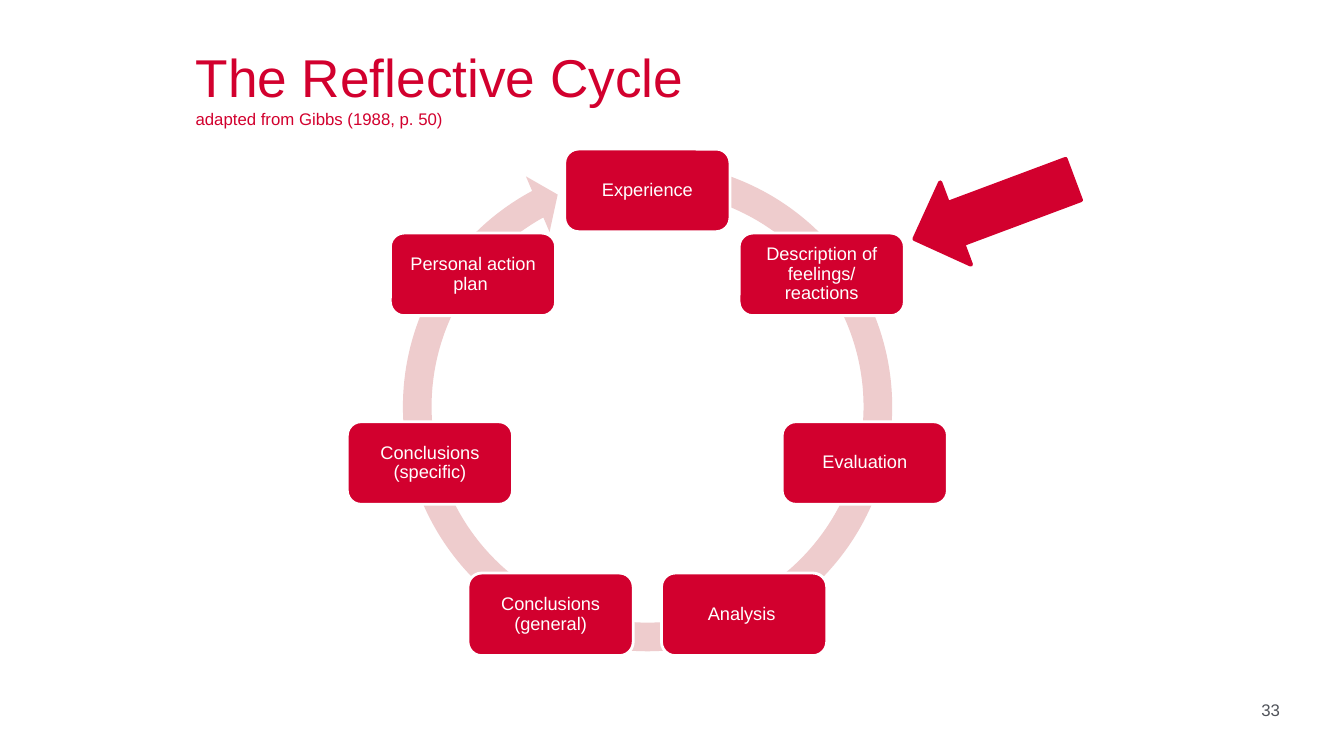
import math
from dataclasses import dataclass

import pptx
import pptx.util
from pptx.dml.color import RGBColor
from pptx.enum.shapes import MSO_SHAPE
from pptx.enum.text import MSO_ANCHOR, PP_ALIGN

Pt = pptx.util.Pt


@dataclass(frozen=True)
class Theme:
    font: str = "Arial"
    red: str = "D2002E"
    pale_red: str = "EECCCD"
    white: str = "FFFFFF"
    grey: str = "50535A"
    title_size: float = 38
    small_size: float = 12
    node_size: float = 13


def write(para, text, font, size, color, align=PP_ALIGN.LEFT, spacing=1.0):
    para.alignment = align
    para.line_spacing = spacing
    span = para.add_run()
    span.text = text
    span.font.name = font
    span.font.size = Pt(size)
    span.font.color.rgb = RGBColor.from_string(color)


class SlideBuilder:
    def __init__(self, page, theme):
        self.page = page
        self.theme = theme

    def prepare_frame(self, box, anchor, inset=0):
        frame = box.text_frame
        frame.word_wrap = True
        frame.vertical_anchor = anchor
        frame.margin_left = frame.margin_right = Pt(inset)
        frame.margin_top = frame.margin_bottom = Pt(inset)
        return frame

    def title(self, heading, source, left, top, width, height):
        box = self.page.shapes.title
        box.left, box.top, box.width, box.height = map(Pt, (left, top, width, height))
        frame = self.prepare_frame(box, MSO_ANCHOR.BOTTOM)
        theme = self.theme
        write(frame.paragraphs[0], heading, theme.font, theme.title_size, theme.red)
        write(frame.add_paragraph(), source, theme.font, theme.small_size, theme.red)

    def page_number(self, number, left, top, width, height):
        box = self.page.shapes.add_textbox(*map(Pt, (left, top, width, height)))
        frame = self.prepare_frame(box, MSO_ANCHOR.TOP)
        write(frame.paragraphs[0], number, self.theme.font, self.theme.small_size,
              self.theme.grey, align=PP_ALIGN.RIGHT)

    def shape(self, kind, left, top, width, height, fill, line=None, line_width=0):
        shape = self.page.shapes.add_shape(kind, *map(Pt, (left, top, width, height)))
        shape.shadow.inherit = False
        shape.fill.solid()
        shape.fill.fore_color.rgb = RGBColor.from_string(fill)
        if line:
            shape.line.color.rgb = RGBColor.from_string(line)
            shape.line.width = Pt(line_width)
        else:
            shape.line.fill.background()
        return shape

    def ring(self, left, top, size):
        ring = self.shape(MSO_SHAPE.CIRCULAR_ARROW, left, top, size, size,
                          self.theme.pale_red)
        for index, value in enumerate((0.055, 3.307, 144.915, 169.641, 0.058)):
            ring.adjustments[index] = value

    def node(self, label, center_x, center_y, width, height):
        theme = self.theme
        node = self.shape(MSO_SHAPE.ROUNDED_RECTANGLE, center_x - width / 2,
                          center_y - height / 2, width, height,
                          theme.red, theme.white, 2)
        frame = self.prepare_frame(node, MSO_ANCHOR.MIDDLE, inset=6.5)
        write(frame.paragraphs[0], label, theme.font, theme.node_size, theme.white,
              align=PP_ALIGN.CENTER, spacing=0.9)

    def cycle(self, labels, center_x, center_y, radius, width, height):
        """Place the labels clockwise at equal angles, starting at the top."""
        for index, label in enumerate(labels):
            angle = 2 * math.pi * index / len(labels)
            self.node(label, center_x + radius * math.sin(angle),
                      center_y - radius * math.cos(angle), width, height)

    def pointer(self, left, top, width, height, rotation):
        arrow = self.shape(MSO_SHAPE.RIGHT_ARROW, left, top, width, height,
                           self.theme.red, self.theme.red, 3)
        arrow.rotation = rotation


STAGES = (
    "Experience",
    "Description of feelings/ reactions",
    "Evaluation",
    "Analysis ",
    "Conclusions (general)",
    "Conclusions (specific)",
    "Personal action plan ",
)


def main():
    deck = pptx.Presentation()
    deck.slide_width, deck.slide_height = Pt(960), Pt(540)
    page = deck.slides.add_slide(deck.slide_layouts[5])
    builder = SlideBuilder(page, Theme())

    builder.title("The Reflective Cycle", "adapted from Gibbs (1988, p. 50)",
                  139.7, 34, 652.3, 58)
    builder.page_number("33", 843, 499.7, 71.3, 20)
    builder.ring(276.5, 104.4, 372.2)
    builder.cycle(STAGES, 462.4, 295.3, 159.3, 118, 59)
    builder.pointer(649.4, 118.1, 121, 62.6, 159.5)

    deck.save("out.pptx")


if __name__ == "__main__":
    main()
